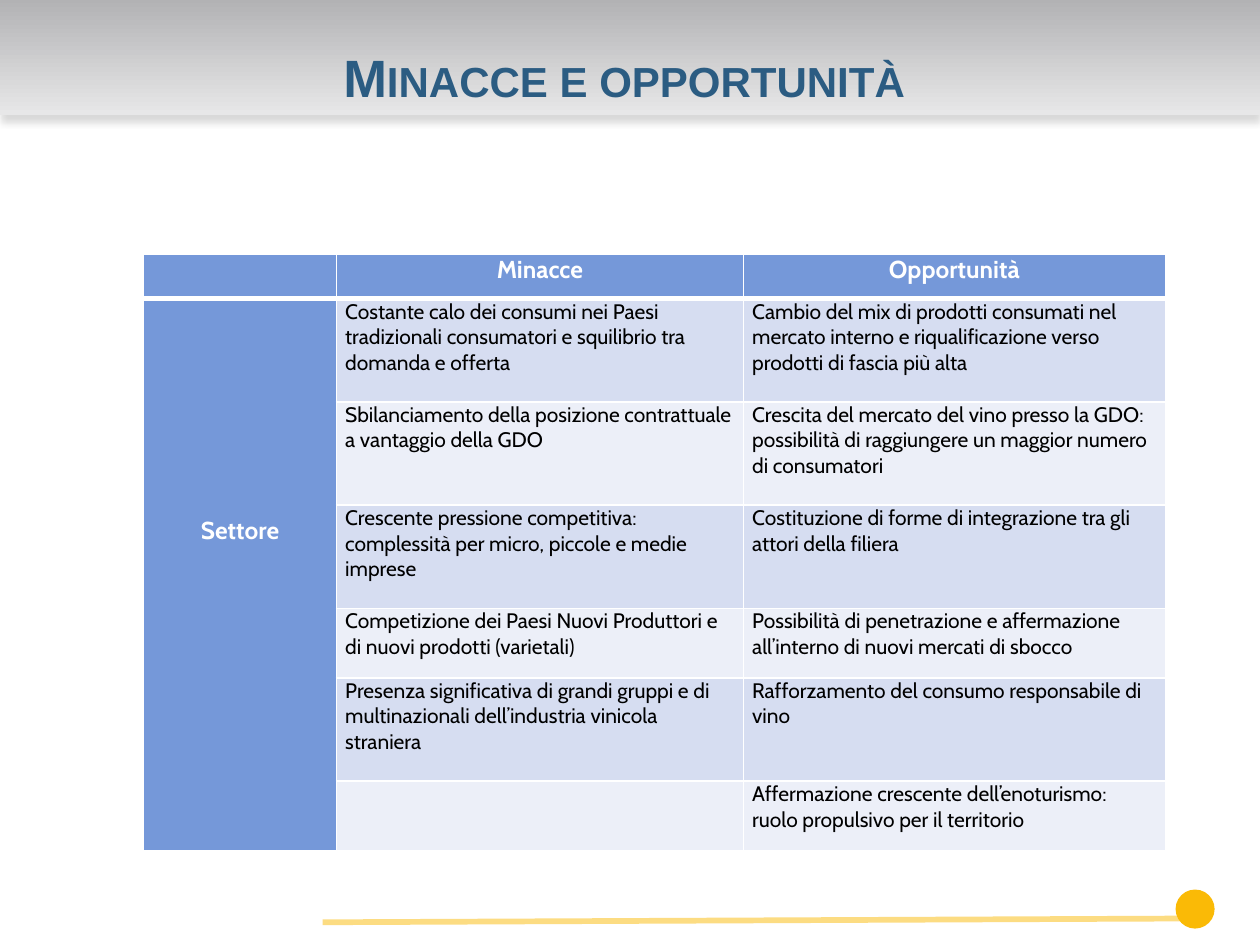
from lxml.etree import SubElement
from pptx import Presentation
from pptx.dml.color import RGBColor
from pptx.enum.shapes import MSO_CONNECTOR, MSO_SHAPE
from pptx.enum.text import MSO_ANCHOR, MSO_AUTO_SIZE, PP_ALIGN
from pptx.oxml import parse_xml
from pptx.oxml.ns import nsdecls, qn
from pptx.util import Inches, Pt

COLORS = {
    "title": "2B5C82", "top": "B2B2B4", "bottom": "E7E7E8",
    "shadow": "D9D9D9", "accent": "FABA06", "head": "7598D9",
    "odd": "D6DDF1", "even": "ECEFF8", "white": "FFFFFF", "black": "000000",
}
COLS = [1.53, 3.23, 3.35]
HEIGHTS = [0.35, 0.82, 0.82, 0.82, 0.55, 0.82, 0.55]
ROWS = [
    ("", "Minacce", "Opportunità"),
    ("Settore",
     "Costante calo dei consumi nei Paesi tradizionali consumatori e squilibrio tra domanda e offerta",
     "Cambio del mix di prodotti consumati nel mercato interno e riqualificazione verso prodotti di fascia più alta"),
    ("", "Sbilanciamento della posizione contrattuale a vantaggio della GDO",
     "Crescita del mercato del vino presso la GDO: possibilità di raggiungere un maggior numero di consumatori"),
    ("", "Crescente pressione competitiva: complessità per micro, piccole e medie imprese",
     "Costituzione di forme di integrazione tra gli attori della filiera"),
    ("", "Competizione dei Paesi Nuovi Produttori e di nuovi prodotti (varietali)",
     "Possibilità di penetrazione e affermazione all’interno di nuovi mercati di sbocco"),
    ("", "Presenza significativa di grandi gruppi e di multinazionali dell’industria vinicola straniera",
     "Rafforzamento del consumo responsabile di vino"),
    ("", "", "Affermazione crescente dell’enoturismo: ruolo propulsivo per il territorio"),
]


def rgb(name):
    return RGBColor.from_string(COLORS[name])


def set_font(para, face, size, color, bold):
    font = para.font
    font.name, font.size, font.bold = face, Pt(size), bold
    font.color.rgb = rgb(color)


def add_title(slide):
    title = slide.shapes.title
    title.left, title.top = Inches(0), Inches(-0.01)
    title.width, title.height = Inches(10), Inches(0.92)
    title.fill.gradient()
    title.fill.gradient_angle = 270
    for stop, name in zip(title.fill.gradient_stops, ("top", "bottom")):
        stop.color.rgb = rgb(name)
    title.line.fill.background()
    title._element.spPr.append(parse_xml(
        f'<a:effectLst {nsdecls("a")}><a:outerShdw blurRad="{Pt(4)}" dist="{Pt(4)}" '
        f'dir="5400000" rotWithShape="0"><a:srgbClr val="{COLORS["shadow"]}"/>'
        '</a:outerShdw></a:effectLst>'))
    frame = title.text_frame
    frame.word_wrap = True
    frame.auto_size = MSO_AUTO_SIZE.NONE
    frame.vertical_anchor = MSO_ANCHOR.BOTTOM
    para = frame.paragraphs[0]
    para.alignment = PP_ALIGN.CENTER
    run = para.add_run()
    run.text = "Minacce e opportunità "
    run._r.get_or_add_rPr().set("cap", "small")
    set_font(para, "Arial", 30, "title", True)


def add_dot(slide):
    dot = slide.shapes.add_shape(
        MSO_SHAPE.OVAL, Inches(9.33), Inches(7.06), Inches(0.31), Inches(0.31))
    dot.shadow.inherit = False
    dot.fill.solid()
    dot.fill.fore_color.rgb = rgb("accent")
    dot.line.fill.background()


def add_rule(slide):
    rule = slide.shapes.add_connector(
        MSO_CONNECTOR.STRAIGHT, Inches(2.56), Inches(7.32), Inches(9.41), Inches(7.29))
    rule.line.color.rgb = rgb("accent")
    rule.line.width = Pt(3.25)
    props = rule._element.spPr
    color = props.find(".//" + qn("a:srgbClr"))
    SubElement(color, qn("a:alpha")).set("val", "49000")
    SubElement(props, qn("a:effectLst"))


def set_edges(cell, top, bottom):
    props = cell._tc.get_or_add_tcPr()
    widths = {"L": 1, "R": 1, "T": top, "B": bottom}
    for spot, (side, width) in enumerate(widths.items()):
        props.insert(spot, parse_xml(
            f'<a:ln{side} {nsdecls("a")} w="{Pt(width)}"><a:solidFill>'
            f'<a:srgbClr val="{COLORS["white"]}"/></a:solidFill></a:ln{side}>'))


def fill_cell(cell, text, row, col):
    head = row == 0 or col == 0
    cell.margin_left = cell.margin_right = Inches(0.07)
    cell.margin_top = cell.margin_bottom = 0
    cell.fill.solid()
    cell.fill.fore_color.rgb = rgb("head" if head else "odd" if row % 2 else "even")
    set_edges(cell, 3 if row == 1 else 1, 3 if row == 0 else 1)
    if text:
        cell.text = text
        para = cell.text_frame.paragraphs[0]
        para.alignment = PP_ALIGN.CENTER if head else PP_ALIGN.LEFT
        set_font(para, "Cabin", 14 if head else 12, "white" if head else "black", head)


def add_grid(slide):
    table = slide.shapes.add_table(
        len(ROWS), len(COLS), Inches(1.14), Inches(2.02),
        Inches(sum(COLS)), Inches(sum(HEIGHTS))).table
    table.horz_banding = False
    for col, width in zip(table.columns, COLS):
        col.width = Inches(width)
    for row, height in zip(table.rows, HEIGHTS):
        row.height = Inches(height)
    for row, texts in enumerate(ROWS):
        for col, text in enumerate(texts):
            fill_cell(table.cell(row, col), text, row, col)
    sector = table.cell(1, 0)
    sector.merge(table.cell(len(ROWS) - 1, 0))
    sector.vertical_anchor = MSO_ANCHOR.MIDDLE
    sector.margin_bottom = Inches(0.7)


def main():
    deck = Presentation()
    deck.slide_width, deck.slide_height = Inches(10), Inches(7.5)
    slide = deck.slides.add_slide(deck.slide_layouts[5])
    add_dot(slide)
    add_rule(slide)
    add_title(slide)
    add_grid(slide)
    deck.save("out.pptx")


if __name__ == "__main__":
    main()
